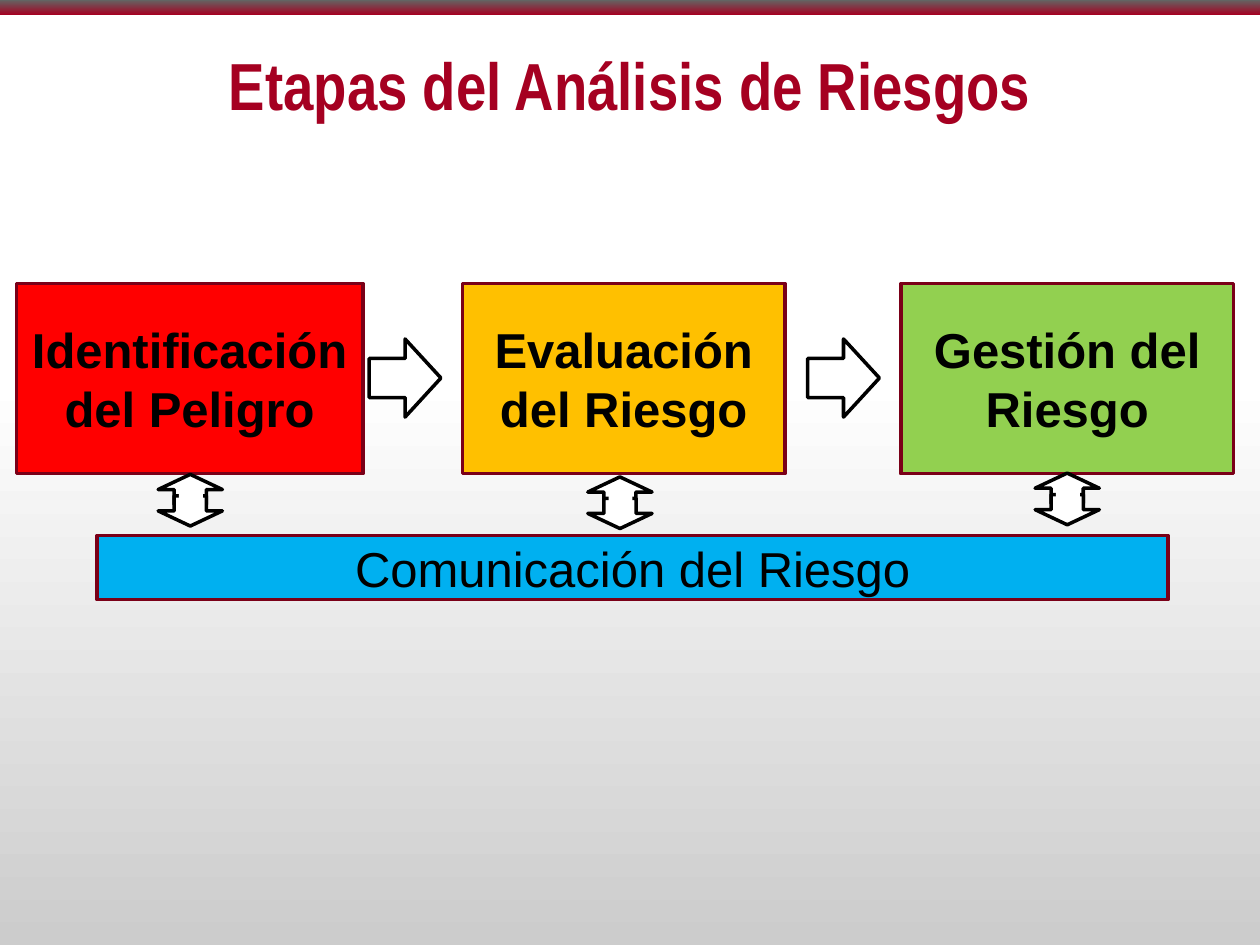
import pptx
import pptx.util
import pptx.dml.color
import pptx.enum.shapes
import pptx.enum.text

RGBColor = pptx.dml.color.RGBColor
Shape = pptx.enum.shapes.MSO_SHAPE
Anchor = pptx.enum.text.MSO_ANCHOR

CRIMSON = RGBColor(0xA5, 0x00, 0x21)
MAROON = RGBColor(0x7A, 0x00, 0x18)
GRAPHITE = RGBColor(0x63, 0x64, 0x63)
SILVER = RGBColor(0xCC, 0xCC, 0xCC)
WHITE = RGBColor(0xFF, 0xFF, 0xFF)
BLACK = RGBColor(0x00, 0x00, 0x00)
RED = RGBColor(0xFF, 0x00, 0x00)
AMBER = RGBColor(0xFF, 0xC0, 0x00)
GREEN = RGBColor(0x92, 0xD0, 0x50)
BLUE = RGBColor(0x00, 0xB0, 0xF0)

COLUMNS, ROWS = 100, 75
STAGES = [
    ("Identificación del Peligro", 1.3, 27.5, RED),
    ("Evaluación del Riesgo", 36.7, 25.6, AMBER),
    ("Gestión del Riesgo", 71.5, 26.4, GREEN),
]
STAGE_TOP, STAGE_HEIGHT = 22.5, 15.1
FLOW_ARROWS = [29.3, 64.1]
EXCHANGES = [(13.9, 36.3), (48, 36.5), (83.5, 36.2)]


def write_text(frame, text, size=28, font="Arial", color=BLACK, bold=False,
               anchor=Anchor.MIDDLE):
    frame.word_wrap = True
    frame.vertical_anchor = anchor
    para = frame.paragraphs[0]
    para.alignment = pptx.enum.text.PP_ALIGN.CENTER
    span = para.add_run()
    span.text = text
    span.font.size = pptx.util.Pt(size)
    span.font.name = font
    span.font.bold = bold
    span.font.color.rgb = color


def fill_upwards(fill, bottom, top, end=1):
    fill.gradient()
    fill.gradient_angle = 90
    for stop, color, position in zip(fill.gradient_stops, (bottom, top), (0, end)):
        stop.color.rgb = color
        stop.position = position


class SlideBuilder:
    def __init__(self, deck):
        self.page = deck.slides.add_slide(deck.slide_layouts[6])
        self.column = deck.slide_width / COLUMNS
        self.row = deck.slide_height / ROWS
        self.line_width = pptx.util.Pt(2)

    def place(self, left, top, width, height):
        return (round(left * self.column), round(top * self.row),
                round(width * self.column), round(height * self.row))

    def background(self, bottom, top, end):
        fill_upwards(self.page.background.fill, bottom, top, end)

    def shape(self, kind, area, fill=WHITE, line=BLACK, parent=None):
        box = (parent or self.page).shapes.add_shape(kind, *self.place(*area))
        box.shadow.inherit = False
        box.fill.solid()
        box.fill.fore_color.rgb = fill
        if line is None:
            box.line.fill.background()
        else:
            box.line.color.rgb = line
            box.line.width = self.line_width
        return box

    def band(self, area, bottom, top):
        box = self.shape(Shape.RECTANGLE, area, line=None)
        fill_upwards(box.fill, bottom, top)

    def title(self, text, area):
        box = self.page.shapes.add_textbox(*self.place(*area))
        write_text(box.text_frame, text, size=38, font="Arial Narrow",
                   color=CRIMSON, bold=True, anchor=Anchor.TOP)

    def panel(self, text, area, fill, bold=False):
        box = self.shape(Shape.RECTANGLE, area, fill, MAROON)
        write_text(box.text_frame, text, bold=bold)

    def flow_arrow(self, left):
        self.shape(Shape.RIGHT_ARROW, (left, 26.9, 5.7, 6.2))

    def exchange_arrow(self, left, top):
        group = self.page.shapes.add_group_shape()
        for drop, turn in ((0, 270), (1.7, 90)):
            arrow = self.shape(Shape.RIGHT_ARROW, (left, top + drop, 2.4, 5.1),
                               parent=group)
            arrow.rotation = turn
        self.shape(Shape.RECTANGLE, (left + 0.3, top + 2.1, 1.9, 2.4),
                   line=None, parent=group)


def main():
    deck = pptx.Presentation()
    deck.slide_width = pptx.util.Inches(10)
    deck.slide_height = pptx.util.Inches(7.5)
    slide = SlideBuilder(deck)
    slide.background(SILVER, WHITE, 0.6)
    slide.band((0, 0, COLUMNS, 1.2), CRIMSON, GRAPHITE)
    slide.title("Etapas del Análisis de Riesgos", (5, 3, 90, 9.8))
    for text, left, width, color in STAGES:
        slide.panel(text, (left, STAGE_TOP, width, STAGE_HEIGHT), color, bold=True)
    slide.panel("Comunicación del Riesgo", (7.7, 42.5, 85, 5.1), BLUE)
    for left in FLOW_ARROWS:
        slide.flow_arrow(left)
    for left, top in EXCHANGES:
        slide.exchange_arrow(left, top)
    deck.save("out.pptx")


if __name__ == "__main__":
    main()
